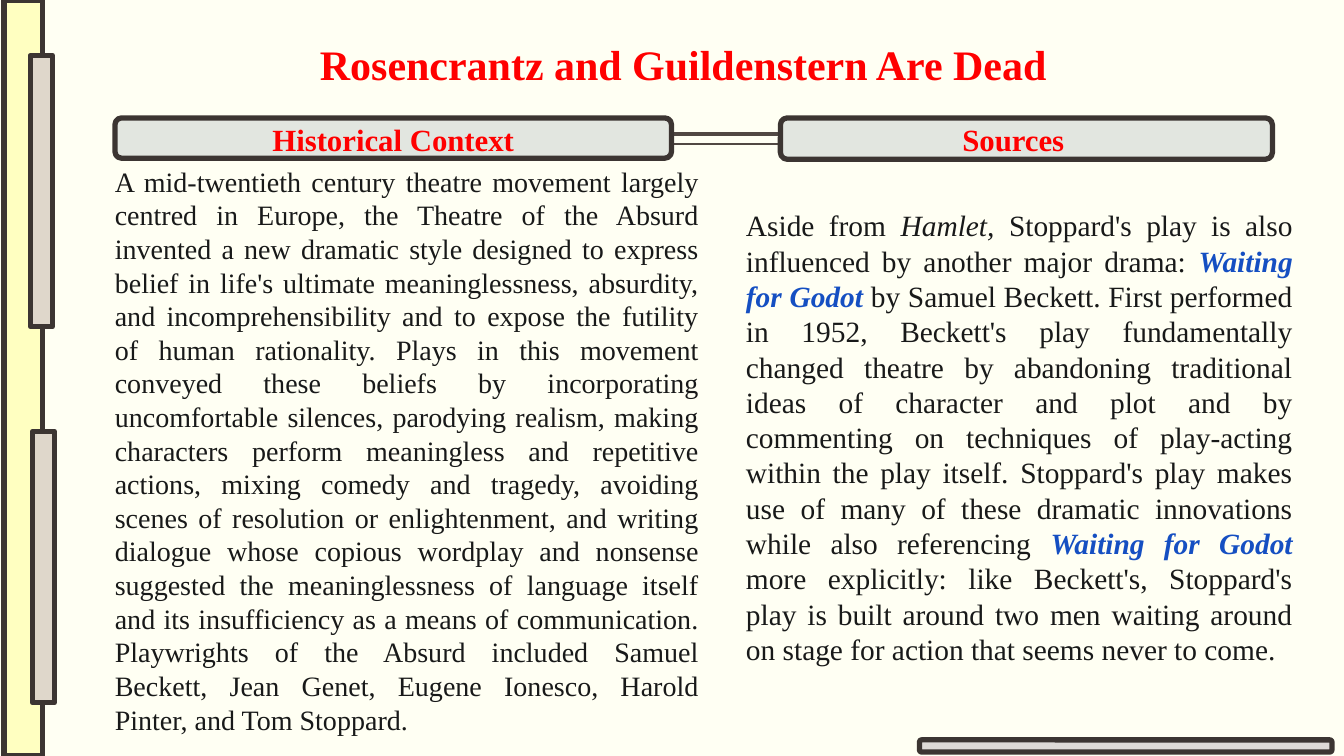
from pptx import Presentation
from pptx import util as u
from pptx.dml.color import RGBColor
from pptx.enum import shapes, text
from pptx.oxml import ns
from lxml import etree

FONT = "Times New Roman"
RED, INK, BLUE, EDGE, RULE = "FF0000", "181919", "154FC2", "3C3532", "514843"
RECT = shapes.MSO_SHAPE.RECTANGLE
ROUND = shapes.MSO_SHAPE.ROUNDED_RECTANGLE
MID, FULL = text.PP_ALIGN.CENTER, text.PP_ALIGN.JUSTIFY

CONTEXT = (
    "A mid-twentieth century theatre movement largely centred in Europe, "
    "the Theatre of the Absurd invented a new dramatic style designed to "
    "express belief in life's ultimate meaninglessness, absurdity, and "
    "incomprehensibility and to expose the futility of human rationality. "
    "Plays in this movement conveyed these beliefs by incorporating "
    "uncomfortable silences, parodying realism, making characters perform "
    "meaningless and repetitive actions, mixing comedy and tragedy, avoiding "
    "scenes of resolution or enlightenment, and writing dialogue whose "
    "copious wordplay and nonsense suggested the meaninglessness of language "
    "itself and its insufficiency as a means of communication. Playwrights "
    "of the Absurd included Samuel Beckett, Jean Genet, Eugene Ionesco, "
    "Harold Pinter, and Tom Stoppard."
)

# Each run: words, colour, bold, italic
PLAIN = (INK, False, False)
GODOT = ("Waiting for Godot ", BLUE, True, True)
SOURCES = [
    ("Aside from ", *PLAIN),
    ("Hamlet, ", INK, False, True),
    ("Stoppard's play is also influenced by another major drama: ", *PLAIN),
    GODOT,
    ("by Samuel Beckett. First performed in 1952, Beckett's play "
     "fundamentally changed theatre by abandoning traditional ideas of "
     "character and plot and by commenting on techniques of play-acting "
     "within the play itself. Stoppard's play makes use of many of these "
     "dramatic innovations while also referencing ", *PLAIN),
    GODOT,
    ("more explicitly: like Beckett's, Stoppard's play is built around two "
     "men waiting around on stage for action that seems never to come.",
     *PLAIN),
]


def shade(code):
    return RGBColor.from_string(code)


class Page:
    def __init__(self, slide, font, edge):
        self.slide, self.font, self.edge = slide, font, edge

    def back(self, code):
        fill = self.slide.background.fill
        fill.solid()
        fill.fore_color.rgb = shade(code)

    def rule(self, left, right, y, width):
        line = self.slide.shapes.add_connector(
            shapes.MSO_CONNECTOR.STRAIGHT,
            u.Inches(right), u.Inches(y), u.Inches(left), u.Inches(y))
        line.line.color.rgb = shade(RULE)
        line.line.width = u.Pt(width)
        etree.SubElement(line._element.spPr, ns.qn("a:effectLst"))

    def box(self, kind, place, code):
        box = self.slide.shapes.add_shape(kind, *map(u.Inches, place))
        box.shadow.inherit = False
        box.fill.solid()
        box.fill.fore_color.rgb = shade(code)
        box.line.color.rgb = shade(self.edge)
        box.line.width = u.Pt(3.78)

    def words(self, place, runs, size, align):
        frame = self.slide.shapes.add_textbox(
            *map(u.Inches, place)).text_frame
        frame.word_wrap = True
        frame.auto_size = text.MSO_AUTO_SIZE.SHAPE_TO_FIT_TEXT
        para = frame.paragraphs[0]
        para.alignment = align
        for words, code, bold, slant in runs:
            run = para.add_run()
            run.text = words
            font = run.font
            font.name, font.size = self.font, u.Pt(size)
            font.bold, font.italic = bold, slant
            font.color.rgb = shade(code)

    def head(self, place, words, size):
        self.words(place, [(words, RED, True, False)], size, MID)


def main():
    deck = Presentation()
    deck.slide_width, deck.slide_height = u.Inches(13.33), u.Inches(7.5)
    page = Page(deck.slides.add_slide(deck.slide_layouts[6]), FONT, EDGE)
    page.back("FFFFF3")

    # Double rule behind the headings
    for y, width in ((1.33, 3), (1.43, 1)):
        page.rule(1.21, 12.13, y, width)

    # Side band with its two tabs, and the bottom bar
    page.box(RECT, (0.04, 0, 0.38, 7.5), "FFFFC1")
    for left, top in ((0.3, 0.55), (0.32, 4.28)):
        page.box(RECT, (left, top, 0.22, 2.69), "DFD7CB")
    page.box(ROUND, (9.12, 7.34, 4.09, 0.12), "DEDAD7")

    # Title and body columns
    page.head((2.68, 0.33, 8.2, 0.61),
              "Rosencrantz and Guildenstern Are Dead", 30)
    page.words((1.04, 1.58, 5.99, 5.82), [(CONTEXT, *PLAIN)], 20, FULL)
    page.words((7.3, 2.01, 5.62, 5.05), SOURCES, 21, FULL)

    # Column headings on their plates
    for plate, left, name in (
            ((1.14, 1.17, 5.52, 0.4), 2.06, "Historical Context"),
            ((7.74, 1.17, 4.88, 0.41), 8.21, "Sources")):
        page.box(ROUND, plate, "E2E6E0")
        page.head((left, 1.15, 3.68, 0.47), name, 22)

    deck.save("out.pptx")


if __name__ == "__main__":
    main()
